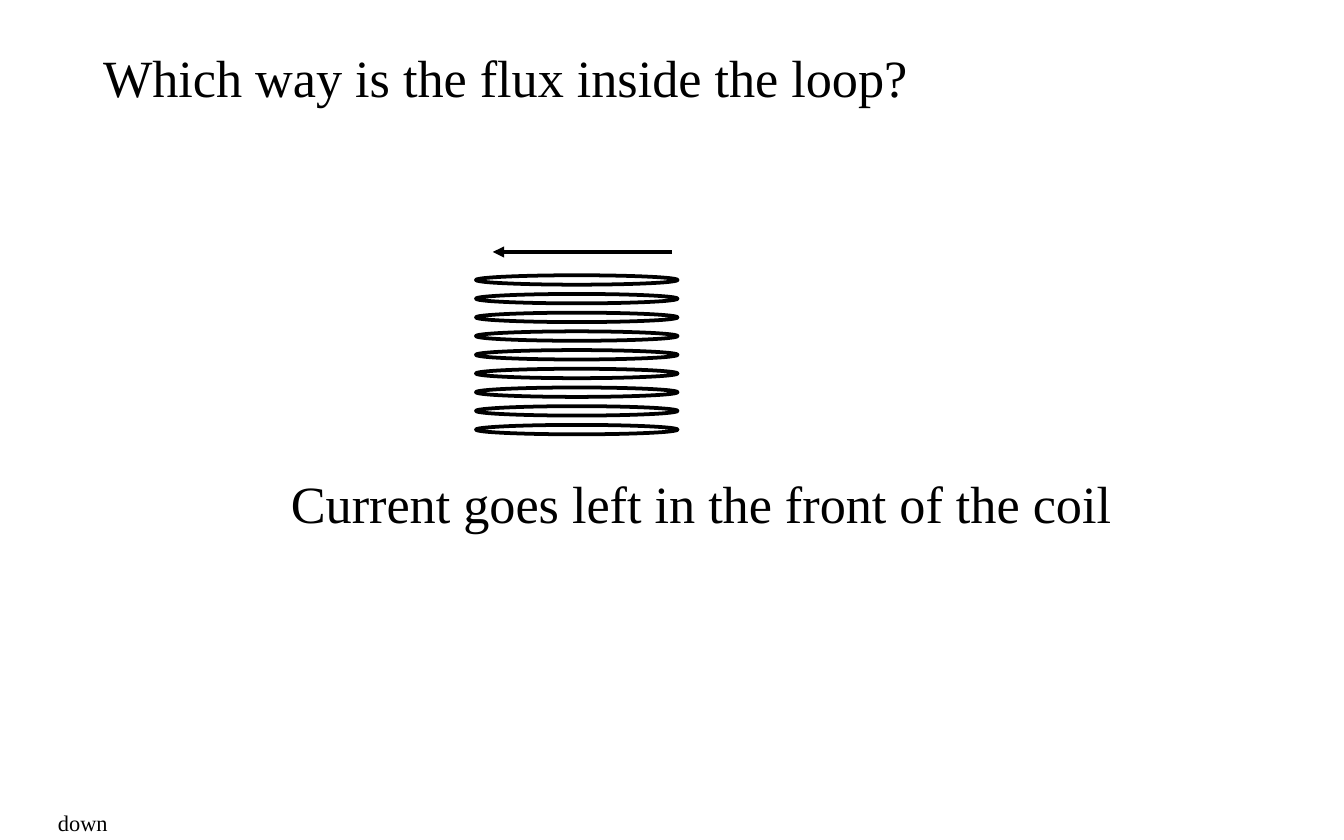
"""Build a slide that asks for the flux direction inside a coil."""
import pptx
import pptx.dml.color
import pptx.enum.shapes
import pptx.enum.text
import pptx.oxml
import pptx.oxml.ns
import pptx.util

BLACK = pptx.dml.color.RGBColor(0, 0, 0)
FONT = "Times New Roman"
COLUMNS, ROWS = 120, 75
WIDTH, HEIGHT = pptx.util.Inches(10), pptx.util.Inches(6.25)

TITLE = ("Which way is the flux inside the loop?", 28, (8, 3.4, 75, 6.8))
LABELS = [
    ("Current goes left in the front of the coil", 28, (24.8, 41.5, 76.4, 6.8)),
    ("down", 12, (4, 71.65, 7, 3.6)),
]
COIL = {"turns": 9, "left": 42.5, "top": 24.58, "width": 18, "height": 0.84, "pitch": 1.67}
CURRENT = {"start": 60, "end": 44, "row": 22.5}


def across(columns):
    return round(WIDTH * columns / COLUMNS)


def down(rows):
    return round(HEIGHT * rows / ROWS)


def place(left, top, width, height):
    return across(left), down(top), across(width), down(height)


def write(box, text, size):
    frame = box.text_frame
    frame.text = text
    frame.word_wrap = False
    frame.auto_size = pptx.enum.text.MSO_AUTO_SIZE.NONE
    frame.vertical_anchor = pptx.enum.text.MSO_ANCHOR.TOP
    para = frame.paragraphs[0]
    para.alignment = pptx.enum.text.PP_ALIGN.LEFT
    para.line_spacing = 1.0
    para.space_before = pptx.util.Pt(0)
    font = para.runs[0].font
    font.name, font.size = FONT, pptx.util.Pt(size)
    font.color.rgb = BLACK


def ink(line):
    line.color.rgb = BLACK
    line.width = pptx.util.Pt(2)


def add_coil(page):
    coil = page.shapes.add_group_shape()
    for turn in range(COIL["turns"]):
        top = COIL["top"] + turn * COIL["pitch"]
        loop = coil.shapes.add_shape(
            pptx.enum.shapes.MSO_SHAPE.OVAL,
            *place(COIL["left"], top, COIL["width"], COIL["height"]))
        loop.shadow.inherit = False
        loop.fill.background()
        ink(loop.line)


def add_current(page):
    row = down(CURRENT["row"])
    arrow = page.shapes.add_connector(
        pptx.enum.shapes.MSO_CONNECTOR.STRAIGHT,
        across(CURRENT["start"]), row, across(CURRENT["end"]), row)
    ink(arrow.line)
    head = pptx.oxml.parse_xml(
        f'<a:tailEnd {pptx.oxml.ns.nsdecls("a")} type="triangle"/>')
    arrow.line._get_or_add_ln().append(head)
    arrow._element.spPr.append(
        pptx.oxml.parse_xml(f'<a:effectLst {pptx.oxml.ns.nsdecls("a")}/>'))


def main():
    deck = pptx.Presentation()
    deck.slide_width, deck.slide_height = WIDTH, HEIGHT
    page = deck.slides.add_slide(deck.slide_layouts.get_by_name("Title Only"))
    text, size, area = TITLE
    title = page.shapes.title
    title.left, title.top, title.width, title.height = place(*area)
    write(title, text, size)
    add_coil(page)
    add_current(page)
    for text, size, area in LABELS:
        write(page.shapes.add_textbox(*place(*area)), text, size)
    deck.save("out.pptx")


if __name__ == "__main__":
    main()
